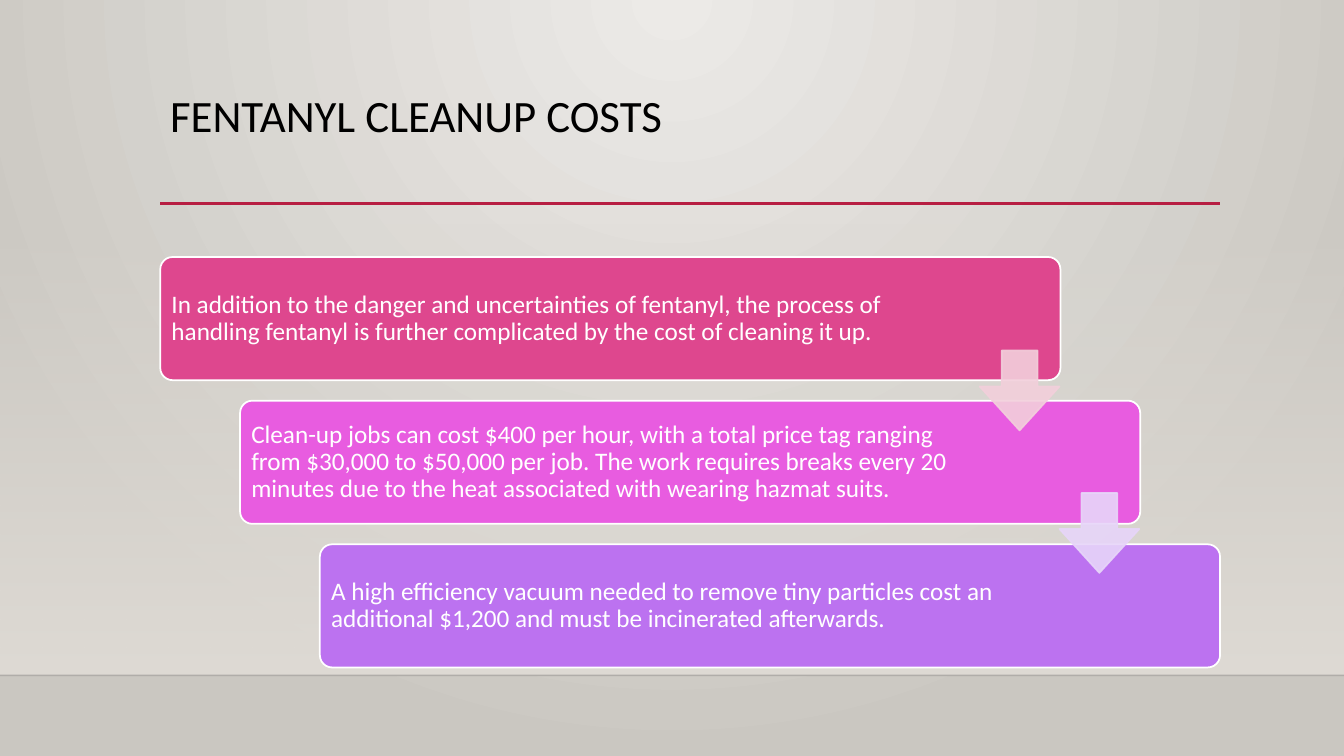
"""Build the slide on fentanyl cleanup costs with three stepped boxes."""
from dataclasses import dataclass

import lxml.etree
import pptx
import pptx.dml.color
import pptx.enum.shapes
import pptx.enum.text
import pptx.oxml.ns
import pptx.util

Pt = pptx.util.Pt
RGBColor = pptx.dml.color.RGBColor
SHAPE = pptx.enum.shapes.MSO_SHAPE
ANCHOR = pptx.enum.text.MSO_ANCHOR
qn = pptx.oxml.ns.qn

BLACK = RGBColor(0x00, 0x00, 0x00)
WHITE = RGBColor(0xFF, 0xFF, 0xFF)
CRIMSON = RGBColor(0xB7, 0x1E, 0x42)
FLOOR_LINE = RGBColor(0x00, 0x00, 0x01)
WALL = RGBColor(0xDF, 0xDB, 0xD5)
GLOW = RGBColor(0xEC, 0xEA, 0xE7)
EDGE = RGBColor(0xCA, 0xC7, 0xC1)
PINK = RGBColor(0xDE, 0x47, 0x8E)
MAGENTA = RGBColor(0xE8, 0x5C, 0xE0)
PURPLE = RGBColor(0xBC, 0x72, 0xF0)
PALE_PINK = RGBColor(0xF2, 0xCF, 0xDB)
PALE_PURPLE = RGBColor(0xE7, 0xD5, 0xF9)

WIDTH, HEIGHT = 960, 540
LEFT, FLOOR = 114.5, 482.4
STEP_X = 57
BOX_TOP, BOX_STEP, BOX_W, BOX_H = 183.6, 102.6, 643, 88
TEXT_GAP = 2.6
ARROW_LEFT, ARROW_TOP, ARROW_STEP, ARROW_SIZE = 699.8, 250.4, 101.8, 57


@dataclass
class Step:
    text: str
    fill: RGBColor
    text_width: float


@dataclass
class Rule:
    left: float
    right: float
    y: float
    color: RGBColor
    weight: float
    opacity: int = 100


STEPS = [
    Step("In addition to the danger and uncertainties of fentanyl, the process of "
         "handling fentanyl is further complicated by the cost of cleaning it up.",
         PINK, 548),
    Step("Clean-up jobs can cost $400 per hour, with a total price tag ranging from "
         "$30,000 to $50,000 per job. The work requires breaks every 20 minutes due "
         "to the heat associated with wearing hazmat suits.", MAGENTA, 523.5),
    Step("A high efficiency vacuum needed to remove tiny particles cost an additional "
         "$1,200 and must be incinerated afterwards.", PURPLE, 523.5),
]
ARROW_COLORS = [PALE_PINK, PALE_PURPLE]
RULES = [
    Rule(0, WIDTH, FLOOR, FLOOR_LINE, 1, 20),
    Rule(LEFT, 871.2, 145.4, CRIMSON, 2.5),
]


def set_opacity(colors: list, percent: int) -> None:
    for color in colors:
        alpha = lxml.etree.SubElement(color, qn("a:alpha"))
        alpha.set("val", str(percent * 1000))


def set_gradient(fill, first: RGBColor, last: RGBColor) -> None:
    fill.gradient()
    for stop, color, position in zip(fill.gradient_stops, (first, last), (0, 1)):
        stop.color.rgb = color
        stop.position = position


def paint_background(s) -> None:
    set_gradient(s.background.fill, GLOW, EDGE)
    grad = next(s.element.iter(qn("a:gradFill")))
    grad.remove(grad.find(qn("a:lin")))
    circle = lxml.etree.SubElement(grad, qn("a:path"))
    circle.set("path", "circle")
    center = lxml.etree.SubElement(circle, qn("a:fillToRect"))
    for side, value in {"l": 43000, "t": 0, "r": 43000, "b": 100000}.items():
        center.set(side, str(value))


def add_wall(s) -> None:
    sp = s.shapes.add_shape(SHAPE.RECTANGLE, 0, Pt(159), Pt(WIDTH), Pt(FLOOR - 159))
    sp.shadow.inherit = False
    sp.line.fill.background()
    set_gradient(sp.fill, WALL, WALL)
    sp.fill.gradient_angle = 270
    set_opacity(list(sp.element.spPr.iter(qn("a:srgbClr")))[:1], 0)


def add_rule(s, rule: Rule) -> None:
    line = s.shapes.add_connector(
        pptx.enum.shapes.MSO_CONNECTOR.STRAIGHT,
        Pt(rule.left), Pt(rule.y), Pt(rule.right), Pt(rule.y))
    line.line.color.rgb = rule.color
    line.line.width = Pt(rule.weight)
    spPr = line._element.spPr
    if rule.opacity < 100:
        set_opacity(list(spPr.iter(qn("a:srgbClr"))), rule.opacity)
    lxml.etree.SubElement(spPr, qn("a:effectLst"))


def add_block(s, kind, box: tuple, adjustments: list, fill: RGBColor,
              line: RGBColor):
    sp = s.shapes.add_shape(kind, *map(Pt, box))
    sp.shadow.inherit = False
    for i, value in enumerate(adjustments):
        sp.adjustments[i] = value
    sp.fill.solid()
    sp.fill.fore_color.rgb = fill
    sp.line.color.rgb = line
    sp.line.width = Pt(1.25)
    return sp


def add_text(s, text: str, box: tuple, size: float, color: RGBColor,
             frame: dict) -> None:
    tf = s.shapes.add_textbox(*map(Pt, box)).text_frame
    for name, value in {"word_wrap": True, **frame}.items():
        setattr(tf, name, value)
    p = tf.paragraphs[0]
    p.line_spacing = 0.9
    r = p.add_run()
    r.text = text
    for name, value in {"name": "Calibri", "size": Pt(size)}.items():
        setattr(r.font, name, value)
    r.font.color.rgb = color


def main() -> None:
    prs = pptx.Presentation()
    prs.slide_width, prs.slide_height = Pt(WIDTH), Pt(HEIGHT)
    s = prs.slides.add_slide(prs.slide_layouts[6])
    paint_background(s)
    add_wall(s)
    for rule in RULES:
        add_rule(s, rule)
    add_text(s, "FENTANYL CLEANUP COSTS", (LEFT, 63.4, 756, 82.8), 32, BLACK,
             {"vertical_anchor": ANCHOR.TOP})

    margins = ("margin_left", "margin_top", "margin_right", "margin_bottom")
    step_frame = {"vertical_anchor": ANCHOR.MIDDLE, **dict.fromkeys(margins, Pt(5.4))}
    for i, step in enumerate(STEPS):
        left, top = LEFT + i * STEP_X, BOX_TOP + i * BOX_STEP
        add_block(s, SHAPE.ROUNDED_RECTANGLE, (left, top, BOX_W, BOX_H), [0.1],
                  step.fill, WHITE)
        add_text(s, step.text,
                 (left + TEXT_GAP, top + TEXT_GAP, step.text_width,
                  BOX_H - 2 * TEXT_GAP), 18, WHITE, step_frame)

    for i, color in enumerate(ARROW_COLORS):
        box = (ARROW_LEFT + i * STEP_X, ARROW_TOP + i * ARROW_STEP,
               ARROW_SIZE, ARROW_SIZE)
        sp = add_block(s, SHAPE.DOWN_ARROW, box, [0.45, 0.55], color, color)
        set_opacity(list(sp.element.spPr.iter(qn("a:srgbClr"))), 90)
    prs.save("out.pptx")


if __name__ == "__main__":
    main()
